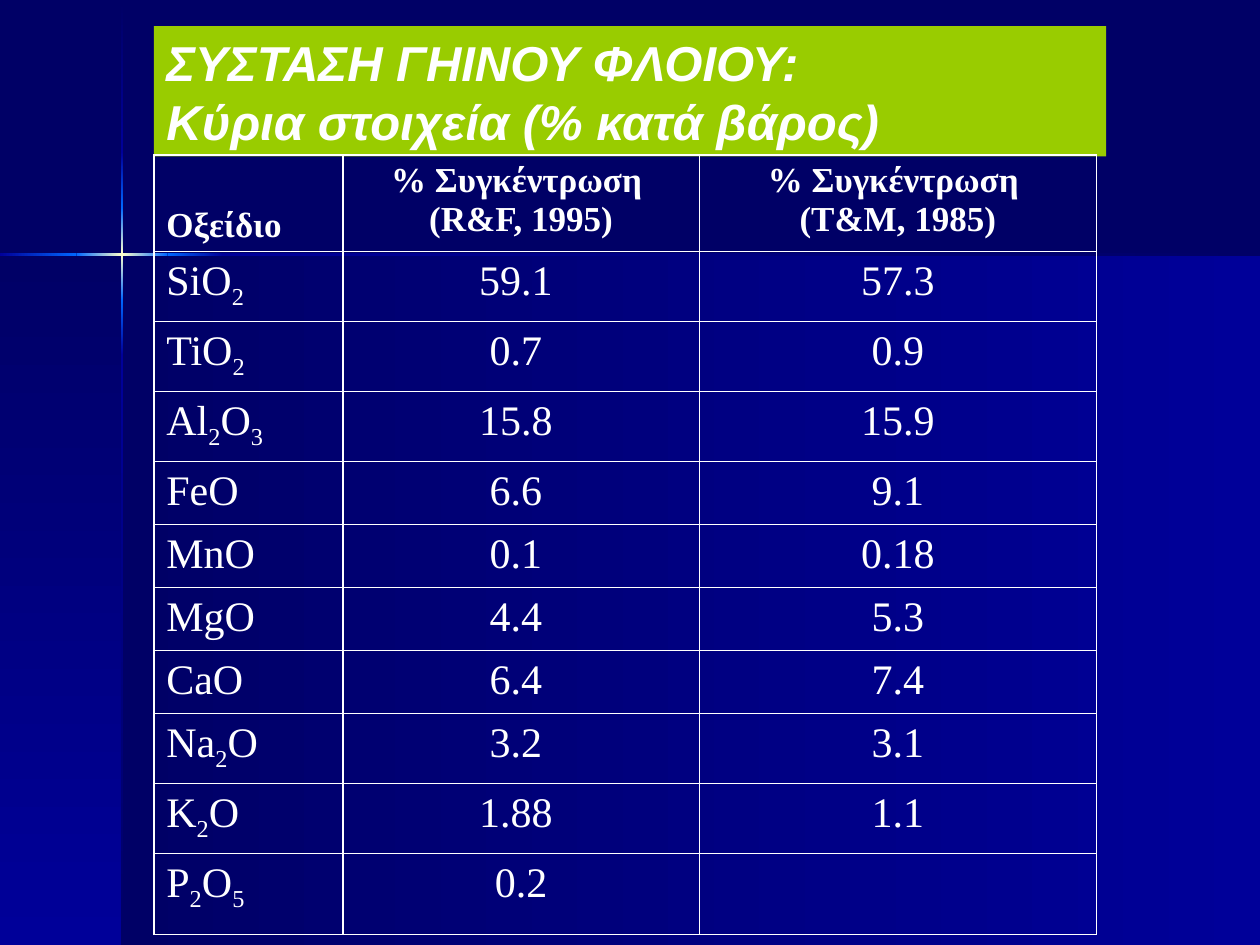
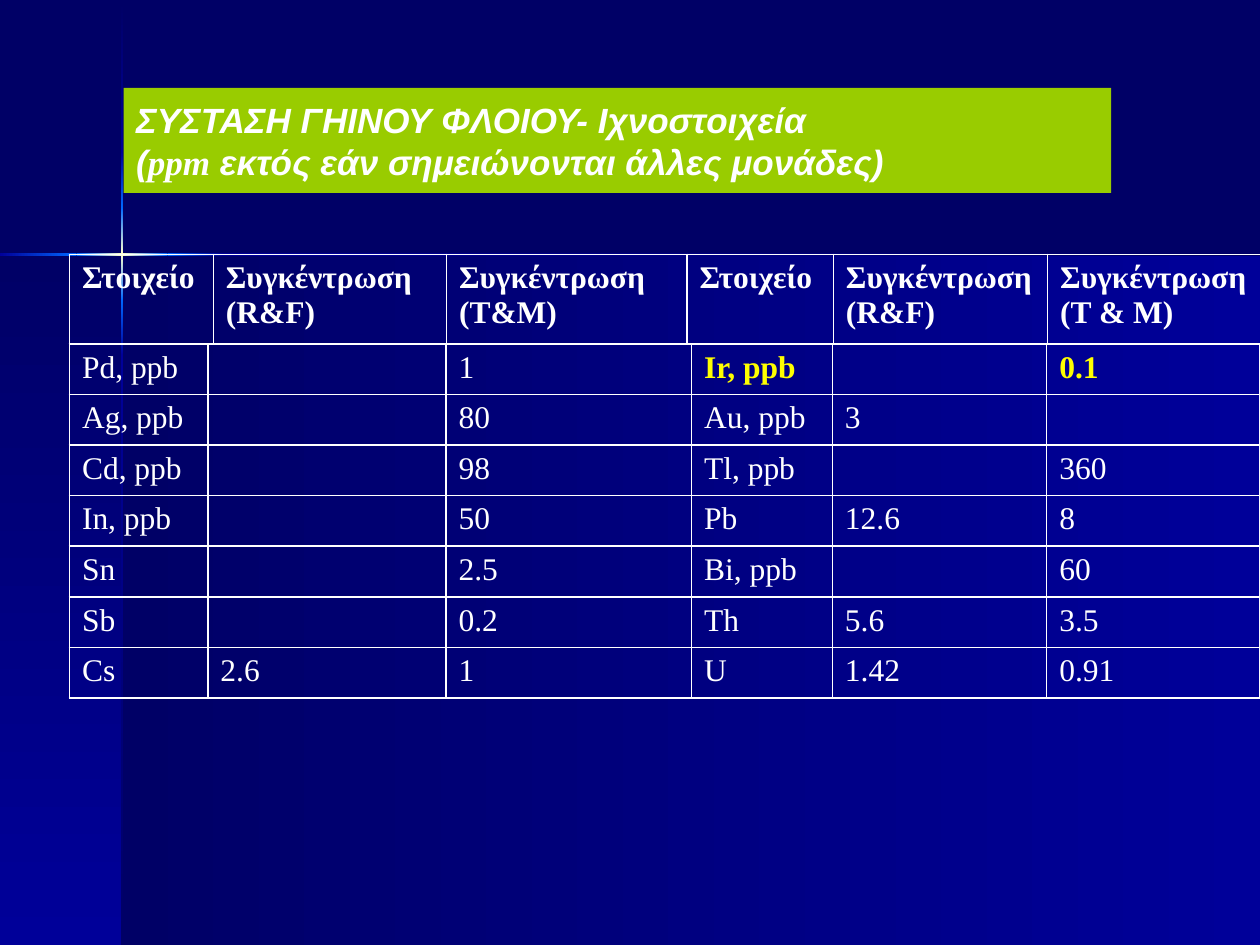
"""Build two slides on the composition of the Earth's crust."""
from dataclasses import dataclass
from itertools import groupby

from lxml import etree
from pptx import Presentation
from pptx.dml.color import RGBColor
from pptx.enum.shapes import MSO_SHAPE
from pptx.enum.text import MSO_ANCHOR, MSO_AUTO_SIZE, PP_ALIGN
from pptx.oxml.ns import qn
from pptx.util import Cm, Pt

RECT = MSO_SHAPE.RECTANGLE
LEFT, CENTER = PP_ALIGN.LEFT, PP_ALIGN.CENTER
TOP, MIDDLE, BOTTOM = MSO_ANCHOR.TOP, MSO_ANCHOR.MIDDLE, MSO_ANCHOR.BOTTOM
GROW = MSO_AUTO_SIZE.SHAPE_TO_FIT_TEXT
TITLE_ONLY = 5
WIDTH, HEIGHT = 25.4, 19.05


@dataclass(frozen=True)
class Theme:
    """Colours, fonts and type sizes of the deck."""
    night: str = "000066"
    royal: str = "000099"
    azure: str = "0066FF"
    glow: str = "FFFFCC"
    lime: str = "99CC00"
    white: str = "FFFFFF"
    yellow: str = "FFFF00"
    title_font: str = "Arial"
    body_font: str = "Times New Roman"
    big_title: int = 28
    small_title: int = 20
    oxide_head: int = 20
    oxide_body: int = 24
    trace: int = 18


T = Theme()

OXIDE_HEAD = ["Οξείδιο", "% Συγκέντρωση \n(R&F, 1995)", "% Συγκέντρωση \n(T&M, 1985)"]
OXIDES = [
    ["SiO2", "59.1 ", "57.3"],
    ["TiO2", "0.7 ", "0.9"],
    ["Al2O3", "15.8 ", "15.9"],
    ["FeO", "6.6 ", "9.1"],
    ["MnO", "0.1 ", "0.18"],
    ["MgO", "4.4 ", "5.3"],
    ["CaO", "6.4 ", "7.4"],
    ["Na2O", "3.2 ", "3.1"],
    ["K2O", "1.88 ", "1.1"],
    ["P2O5", "0.2", ""],
]
TRACE_HEAD = ["Στοιχείο", "Συγκέντρωση (R&F)", "Συγκέντρωση (T&M)",
              "Στοιχείο", "Συγκέντρωση\n(R&F)", "Συγκέντρωση (T & M)"]
TRACES = [
    ["Pd, ppb", "", "1", "Ir, ppb", "", "0.1"],
    ["Ag, ppb", "", "80", "Au, ppb", "3", ""],
    ["Cd, ppb", "", "98", "Tl, ppb", "", "360"],
    ["In, ppb", "", "50", "Pb", "12.6", "8"],
    ["Sn", "", "2.5", "Bi, ppb", "", "60"],
    ["Sb", "", "0.2", "Th", "5.6", "3.5"],
    ["Cs", "2.6", "1", "U", "1.42", "0.91"],
]
IRIDIUM_CELLS = {(0, 3), (0, 5)}


def set_font(font, name, size, color=T.white, bold=False, italic=False):
    """Format one font object."""
    font.name, font.size = name, Pt(size)
    font.bold, font.italic = bold, italic
    font.color.rgb = RGBColor.from_string(color)


def add_gradient(s, box, colors, angle):
    """Add a borderless rectangle with evenly spaced gradient stops."""
    sp = s.shapes.add_shape(RECT, *map(Cm, box))
    sp.shadow.inherit = False
    sp.line.fill.background()
    sp.fill.gradient()
    grad = sp._element.spPr.find(qn("a:gradFill"))
    for child in list(grad):
        grad.remove(child)
    stops = etree.SubElement(grad, qn("a:gsLst"))
    for i, color in enumerate(colors):
        pos = 100000 * i // (len(colors) - 1)
        gs = etree.SubElement(stops, qn("a:gs"), pos=str(pos))
        etree.SubElement(gs, qn("a:srgbClr"), val=color)
    etree.SubElement(grad, qn("a:lin"), ang=str(angle * 60000), scaled="0")


def add_backdrop(s, box):
    """Fill the box with two panels and a glowing cross of thin lines."""
    x, y, w, h = box
    cross_x, cross_y, thick = 2.46, 5.13, 0.05
    panel = [T.night, T.royal]
    add_gradient(s, (x + cross_x, y + cross_y, w - cross_x, h - cross_y), panel, 0)
    add_gradient(s, (x, y + cross_y, cross_x, h - cross_y), panel, 90)
    beams = [panel, [T.royal, T.azure], [T.azure, T.glow, T.azure],
             [T.azure, T.royal], [T.royal, T.night]]
    v_stops = [0.02, 3.07, 4.19, 6.05, 7.16, h]
    h_stops = [0, 1.54, 3.38, 4.5, w]
    for start, end, colors in zip(v_stops, v_stops[1:], beams):
        add_gradient(s, (x + cross_x - thick / 2, y + start, thick, end - start), colors, 90)
    for start, end, colors in zip(h_stops, h_stops[1:], beams[1:]):
        add_gradient(s, (x + start, y + cross_y - thick / 2, end - start, thick), colors, 0)


def add_title(s, box, lines, size):
    """Turn the title placeholder into a green band; each line is a list of (text, font)."""
    sp = s.shapes.title
    sp.left, sp.top, sp.width, sp.height = map(Cm, box)
    sp.fill.solid()
    sp.fill.fore_color.rgb = RGBColor.from_string(T.lime)
    tf = sp.text_frame
    tf.word_wrap, tf.auto_size, tf.vertical_anchor = True, GROW, MIDDLE
    for i, runs in enumerate(lines):
        p = tf.add_paragraph() if i else tf.paragraphs[0]
        p.alignment = LEFT
        set_font(p.font, T.title_font, size, bold=True, italic=True)
        for text, name in runs:
            r = p.add_run()
            r.text = text
            if name != T.title_font:
                r.font.name = name


def add_borders(cell):
    """Clear the cell's fill and draw its four white borders."""
    cell.fill.background()
    tc_pr = cell._tc.get_or_add_tcPr()
    for i, side in enumerate(("lnL", "lnR", "lnT", "lnB")):
        ln = etree.Element(qn(f"a:{side}"), w=str(Pt(1)))
        fill = etree.SubElement(ln, qn("a:solidFill"))
        etree.SubElement(fill, qn("a:srgbClr"), val=T.white)
        tc_pr.insert(i, ln)


def add_grid(s, origin, col_widths, row_heights, rows):
    """Add a plain bordered table filled with text and return it."""
    box = (*origin, sum(col_widths), sum(row_heights))
    table = s.shapes.add_table(len(rows), len(col_widths), *map(Cm, box)).table
    table.first_row = table.horz_banding = False
    for col, width in zip(table.columns, col_widths):
        col.width = Cm(width)
    for row, height, texts in zip(table.rows, row_heights, rows):
        row.height = Cm(height)
        for cell, text in zip(row.cells, texts):
            cell.text = text
            add_borders(cell)
    return table


def style_cell(cell, size, color=T.white, bold=False, align=LEFT, anchor=TOP):
    """Format every paragraph of a cell."""
    cell.vertical_anchor = anchor
    for p in cell.text_frame.paragraphs:
        p.alignment = align
        set_font(p.font, T.body_font, size, color, bold)


def write_formula(cell, formula):
    """Write a chemical formula with its digits as subscripts."""
    p = cell.text_frame.paragraphs[0]
    p.clear()
    for is_digit, chars in groupby(formula, str.isdigit):
        r = p.add_run()
        r.text = "".join(chars)
        if is_digit:
            r._r.get_or_add_rPr().set("baseline", "-25000")


def add_oxide_table(s, origin):
    """Add the table of main elements."""
    heights = [1.41 if any(map(str.isdigit, row[0])) else 1.27 for row in OXIDES]
    heights[-1] = 1.63
    table = add_grid(s, origin, [3.81, 7.19, 8], [1.94] + heights, [OXIDE_HEAD] + OXIDES)
    for i, row in enumerate(table.rows):
        for j, cell in enumerate(row.cells):
            style_cell(cell, T.oxide_body if i else T.oxide_head, bold=i == 0,
                       align=CENTER if j else LEFT,
                       anchor=TOP if i or j else BOTTOM)
        if i:
            write_formula(row.cells[0], OXIDES[i - 1][0])


def add_trace_tables(s, origin):
    """Add the trace element table and the header table above it."""
    x, y = origin
    head_height = 1.8
    body = add_grid(s, (x, y + head_height), [2.79, 4.8, 4.95, 2.84, 4.32, 4.29],
                    [1.02] * len(TRACES), TRACES)
    for i, row in enumerate(body.rows):
        for j, cell in enumerate(row.cells):
            marked = (i, j) in IRIDIUM_CELLS
            style_cell(cell, T.trace, T.yellow if marked else T.white, marked)
    head = add_grid(s, origin, [2.9, 4.7, 4.85, 2.95, 4.32, 4.29], [head_height], [TRACE_HEAD])
    for cell in head.rows[0].cells:
        style_cell(cell, T.trace, bold=True)


def new_slide(prs):
    """Add a title-only slide with the shared background."""
    s = prs.slides.add_slide(prs.slide_layouts[TITLE_ONLY])
    add_backdrop(s, (0, 0, WIDTH, HEIGHT))
    return s


def build_oxide_slide(prs):
    """Build the slide of main elements."""
    s = new_slide(prs)
    lines = ["ΣΥΣΤΑΣΗ ΓΗΙΝΟΥ ΦΛΟΙΟΥ:", "Κύρια στοιχεία (% κατά βάρος)"]
    add_title(s, (3.1, 0.53, 19.2, 2.62), [[(text, T.title_font)] for text in lines], T.big_title)
    add_oxide_table(s, (3.1, 3.12))


def build_trace_slide(prs):
    """Build the slide of trace elements."""
    s = new_slide(prs)
    lines = [
        [("ΣΥΣΤΑΣΗ ΓΗΙΝΟΥ ΦΛΟΙΟΥ- Ιχνοστοιχεία", T.title_font)],
        [("(", T.title_font), ("ppm", T.body_font),
         (" εκτός εάν σημειώνονται άλλες μονάδες)", T.title_font)],
    ]
    add_title(s, (2.49, 1.85, 19.91, 1.96), lines, T.small_title)
    add_trace_tables(s, (1.4, 5.13))


def main():
    """Build and save the deck."""
    prs = Presentation()
    prs.slide_width, prs.slide_height = Cm(WIDTH), Cm(HEIGHT)
    fill = prs.slide_master.background.fill
    fill.solid()
    fill.fore_color.rgb = RGBColor.from_string(T.night)
    build_oxide_slide(prs)
    build_trace_slide(prs)
    prs.save("out.pptx")


if __name__ == "__main__":
    main()
